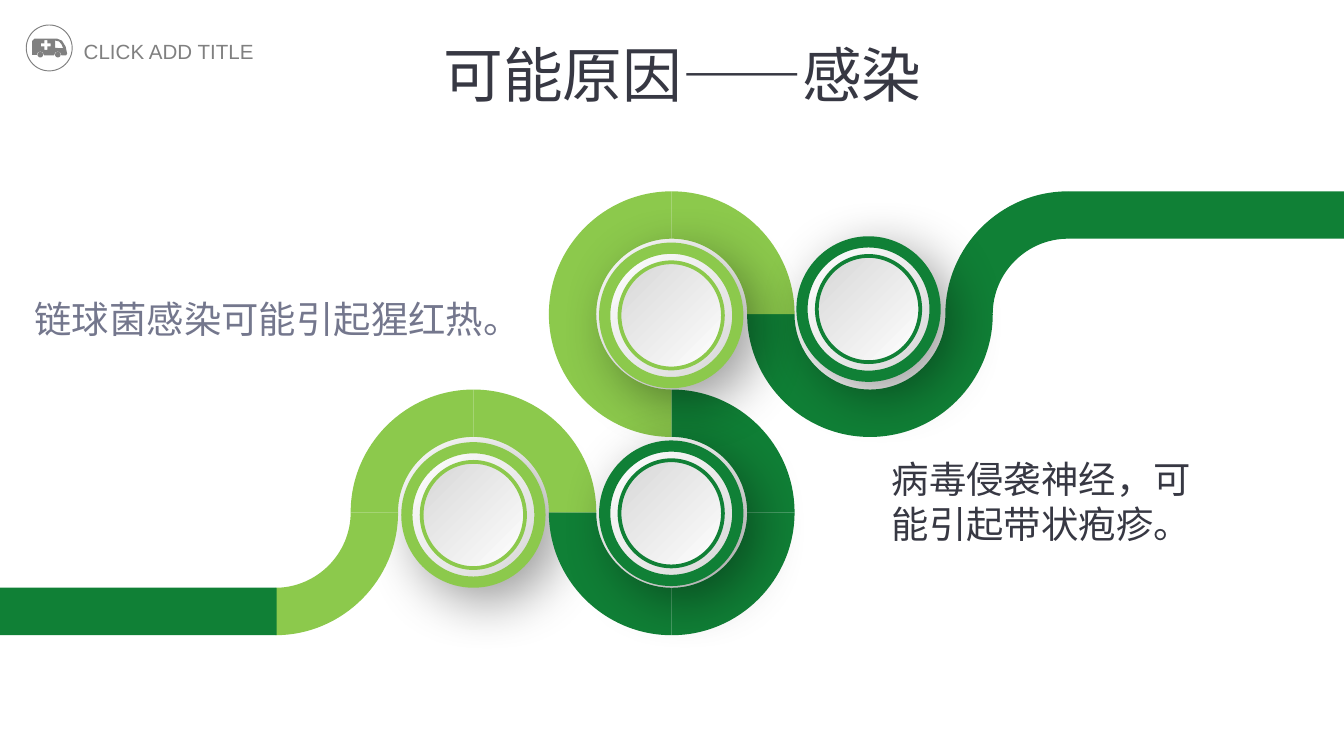
from dataclasses import dataclass
from math import cos, radians, sin

from lxml.etree import SubElement
from pptx import Presentation
from pptx.dml.color import RGBColor
from pptx.enum.shapes import MSO_SHAPE as Preset
from pptx.enum.text import MSO_ANCHOR as Anchor, PP_ALIGN as Align
from pptx.oxml.ns import qn
from pptx.util import Pt


@dataclass(frozen=True)
class Theme:
    light: str = "8CC94C"
    dark: str = "108036"
    gray: str = "808080"
    ink: str = "373843"
    muted: str = "74778D"
    shine: str = "FFFFFF"
    shade: str = "D7D7D7"
    title_size: int = 32
    body_size: int = 20
    header_size: int = 11
    latin: str = "Lato"
    header_font: str = "Arial"
    chinese: str = "Noto Sans CJK SC"


THEME = Theme()
WIDTH, HEIGHT = 720, 405

TITLE = "可能原因——感染"
HEADER = "CLICK ADD TITLE"
LEFT_NOTE = "链球菌感染可能引起猩红热。"
RIGHT_NOTE = "病毒侵袭神经，可能引起带状疱疹。"

# The band winds round centres on a grid; neighbouring rings share its width.
OUTER, INNER = 65.8, 40.4
BAND, PITCH = OUTER - INNER, OUTER + INNER
ORIGIN_X, ORIGIN_Y = 359.85, 168.3
BEZIER = 0.55  # handle length of a quarter circle, in radii
LOWER_RIGHT, LOWER_LEFT, UPPER_LEFT, UPPER_RIGHT = range(4)

# column, row, quarters, colour
RINGS = [
    (2, 0, [UPPER_LEFT], THEME.dark),
    (1, 0, [LOWER_RIGHT, LOWER_LEFT], THEME.dark),
    (0, 0, [UPPER_RIGHT, UPPER_LEFT, LOWER_LEFT], THEME.light),
    (0, 1, [UPPER_RIGHT, LOWER_RIGHT, LOWER_LEFT], THEME.dark),
    (-1, 1, [UPPER_RIGHT, UPPER_LEFT], THEME.light),
    (-2, 1, [LOWER_RIGHT], THEME.light),
]
# centre x, centre y, colour
BACK_BUTTON = (253.6, 275.9, THEME.light)
FRONT_BUTTONS = [
    (359.6, 275, THEME.dark),
    (359.6, 169, THEME.light),
    (465.3, 165.6, THEME.dark),
]

WHEELS, WHEEL_Y, WHEEL_RADIUS = [31, 21.6], 29.3, 1.5
VAN = [
    [(17.3, 29.5), (17.3, 22), (18.5, 20.7), (30.5, 20.7), (33.2, 21.8),
     (35.2, 25), (36, 28.8), (35.4, 29.7), (33, 29.7), (32.3, 28.2),
     (31, 27.6), (29.6, 28.2), (29, 29.7), (23.6, 29.7), (23, 28.2),
     (21.6, 27.6), (20.3, 28.2), (19.7, 29.5)],
    [(29.6, 21.8), (31.7, 22.2), (33, 23.8), (33.9, 25.9), (29.6, 25.7)],
]
CROSS_X, CROSS_Y, CROSS_REACH, CROSS_ARM = 24.6, 24.1, 2.6, 0.75


def color(code):
    return RGBColor.from_string(code)


def solid(shape, code):
    shape.shadow.inherit = False
    shape.fill.solid()
    shape.fill.fore_color.rgb = color(code)
    shape.line.fill.background()


def outline(contours, code):
    """Draw closed contours as one filled shape; later ones cut holes."""
    contours = [[(Pt(x), Pt(y)) for x, y in points] for points in contours]
    builder = page.shapes.build_freeform(*contours[0][0], scale=1.0)
    for number, points in enumerate(contours):
        if number:
            builder.move_to(*points[0])
        builder.add_line_segments(points[1:], close=True)
    shape = builder.convert_to_shape()
    solid(shape, code)
    return shape


def quarter_ring(x, y, quarter, code):
    start, end = [(round(cos(radians(a))), round(sin(radians(a))))
                  for a in (90 * quarter, 90 * quarter + 90)]
    # arc start, its two handles, arc end, as weights of both directions
    weights = [(1, 0), (1, BEZIER), (BEZIER, 1), (0, 1)]

    def arc(radius):
        return [(x + radius * (u * start[0] + v * end[0]),
                 y + radius * (u * start[1] + v * end[1])) for u, v in weights]

    shape = outline([arc(OUTER) + arc(INNER)[::-1]], code)
    segments = list(next(shape._element.iter(qn("a:path"))))
    for first in (1, 5):
        bend_segments(segments[first:first + 3])


def bend_segments(lines):
    """Turn three line segments into one cubic curve."""
    path = lines[0].getparent()
    curve = SubElement(path, qn("a:cubicBezTo"))
    path.replace(lines[0], curve)
    for line in lines:
        curve.append(line[0])
    for line in lines[1:]:
        path.remove(line)


def bar(x, y, width, code):
    solid(page.shapes.add_shape(Preset.RECTANGLE, Pt(x), Pt(y), Pt(width), Pt(BAND)), code)


def disc(shapes, x, y, width, height):
    shape = shapes.add_shape(Preset.OVAL, Pt(x - width / 2), Pt(y - height / 2),
                             Pt(width), Pt(height))
    shape.shadow.inherit = False
    return shape


def button(x, y, code):
    shapes = page.shapes.add_group_shape().shapes
    # width, height, gradient angle, line width
    for width, height, angle, weight in [(71.3, 72, 315, 6), (55.4, 56.9, 135, 2)]:
        shape = disc(shapes, x, y, width, height)
        shape.fill.gradient()
        shape.fill.gradient_angle = angle
        for stop, tone in zip(shape.fill.gradient_stops, (THEME.shine, THEME.shade)):
            stop.color.rgb = color(tone)
        shape.line.color.rgb = color(code)
        shape.line.width = Pt(weight)
    drop_shadow(shapes[0])


def drop_shadow(shape):
    effects = shape._element.spPr.find(qn("a:effectLst"))
    outer = SubElement(effects, qn("a:outerShdw"), blurRad=str(Pt(30)),
                       dist=str(Pt(10)), dir="2700000", algn="tl", rotWithShape="0")
    black = SubElement(outer, qn("a:srgbClr"), val="000000")
    SubElement(black, qn("a:alpha"), val="40000")


def write(box, place, text, size, font, code, align=Align.LEFT, spacing=1.0,
          wrap=True, inset=(5, 3)):
    box.left, box.top, box.width, box.height = map(Pt, place)
    frame = box.text_frame
    frame.word_wrap = wrap
    frame.vertical_anchor = Anchor.TOP
    frame.margin_left = frame.margin_right = Pt(inset[0])
    frame.margin_top = frame.margin_bottom = Pt(inset[1])
    para = frame.paragraphs[0]
    para.alignment, para.line_spacing = align, spacing
    span = para.add_run()
    span.text = text
    span.font.size, span.font.name = Pt(size), font
    span.font.color.rgb = color(code)
    SubElement(span.font._element, qn("a:ea"), typeface=THEME.chinese)


def text_box():
    return page.shapes.add_textbox(0, 0, 0, 0)


deck = Presentation()
deck.slide_width, deck.slide_height = Pt(WIDTH), Pt(HEIGHT)
page = deck.slides.add_slide(deck.slide_layouts[5])

write(page.shapes.title, (230.4, 16.6, 278.6, 46), TITLE, THEME.title_size,
      THEME.latin, THEME.ink, wrap=False, inset=(7.2, 3.6))
write(text_box(), (37.8, 14.7, 115.2, 20.2), HEADER, THEME.header_size,
      THEME.header_font, THEME.gray, spacing=1.2, wrap=False, inset=(7.2, 3.6))

for wheel_x in WHEELS:
    solid(disc(page.shapes, wheel_x, WHEEL_Y, 2 * WHEEL_RADIUS, 2 * WHEEL_RADIUS), THEME.gray)
r, a = CROSS_REACH, CROSS_ARM
cross = [(-a, -r), (a, -r), (a, -a), (r, -a), (r, a), (a, a),
         (a, r), (-a, r), (-a, a), (-r, a), (-r, -a), (-a, -a)]
outline(VAN + [[(CROSS_X + x, CROSS_Y + y) for x, y in cross]], THEME.gray)
badge = disc(page.shapes, 26.4, 25.7, 24.6, 24.6)
badge.fill.background()
badge.line.color.rgb = color(THEME.gray)
badge.line.width = Pt(0.5)

button(*BACK_BUTTON)
for column, row, quarters, code in RINGS:
    for quarter in quarters:
        quarter_ring(ORIGIN_X + column * PITCH, ORIGIN_Y + row * PITCH, quarter, code)
bar_right = ORIGIN_X + 2 * PITCH
bar(bar_right, ORIGIN_Y - OUTER, WIDTH - bar_right, THEME.dark)
bar(0, ORIGIN_Y + PITCH + INNER, 148.3, THEME.dark)

write(text_box(), (-0.4, 148.7, 284.4, 36.7), LEFT_NOTE, THEME.body_size,
      THEME.chinese, THEME.muted, align=Align.RIGHT, spacing=1.3)
write(text_box(), (472.8, 241.6, 180, 54), RIGHT_NOTE, THEME.body_size,
      THEME.latin, THEME.ink)
for place in FRONT_BUTTONS:
    button(*place)

deck.save("out.pptx")
